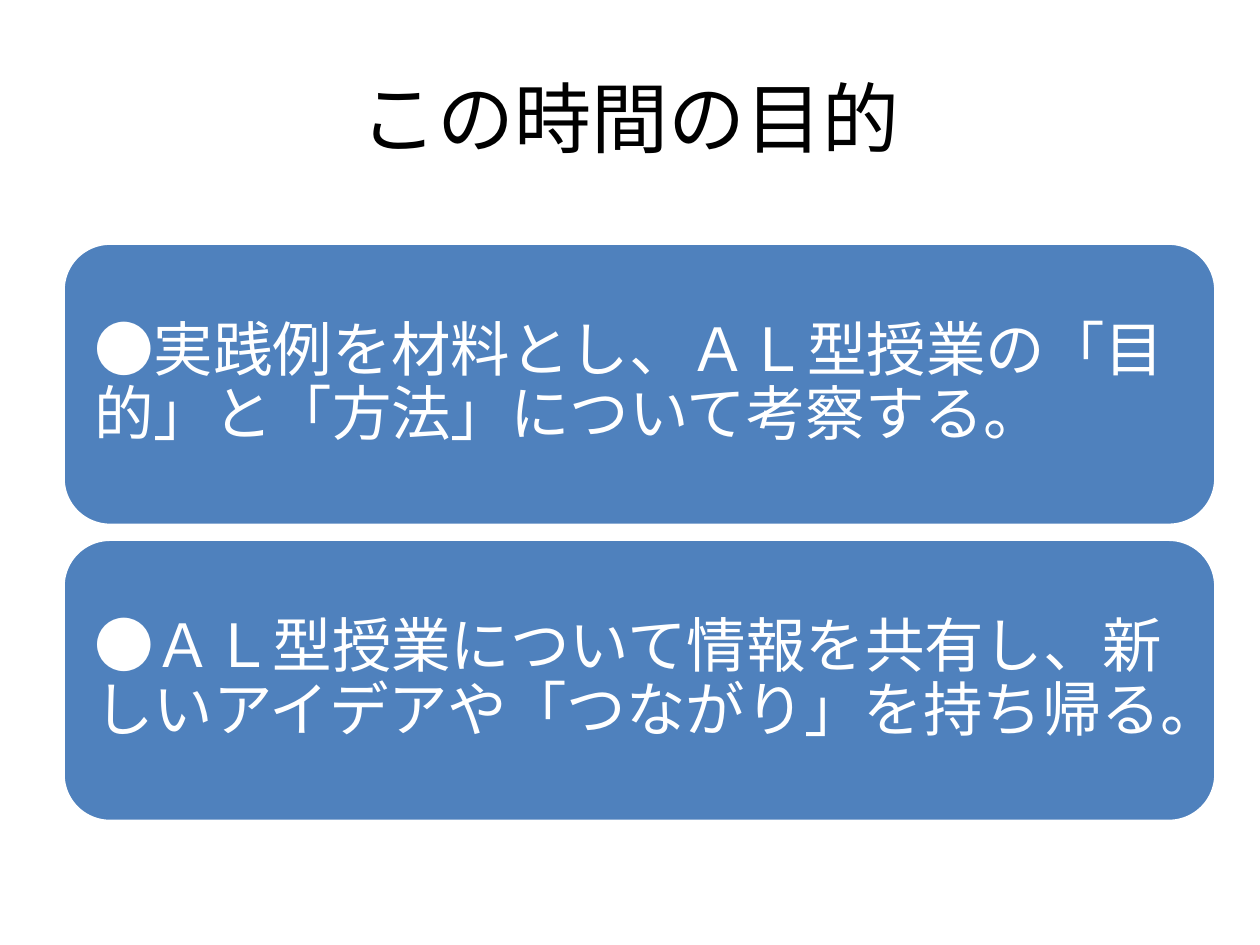
from pptx import Presentation
from pptx import util as u
from pptx.dml import color
from pptx.enum import lang, shapes, text

TITLE = "この時間の目的"
GOALS = [
    "●実践例を材料とし、ＡＬ型授業の「目的」と「方法」について考察する。",
    "●ＡＬ型授業について情報を共有し、新しいアイデアや「つながり」を持ち帰る。",
]

THEME = {
    "font": "Cabin",
    "title_size": 44,
    "goal_size": 34,
    "ink": color.RGBColor.from_string("000000"),
    "paper": color.RGBColor.from_string("FFFFFF"),
    "card": color.RGBColor.from_string("4F81BD"),
}

LEFT = 0.5
CARD_TOP, CARD_WIDTH, CARD_HEIGHT, CARD_GAP = 1.93, 9.15, 2.24, 0.11
CARD_INSET = u.Inches(0.14)


def write(shape, content, size, ink, alignment):
    frame = shape.text_frame
    frame.text = content
    frame.word_wrap = True
    frame.vertical_anchor = text.MSO_ANCHOR.MIDDLE
    paragraph = frame.paragraphs[0]
    paragraph.alignment = alignment
    font = paragraph.runs[0].font
    font.name = THEME["font"]
    font.size = u.Pt(size)
    font.color.rgb = ink
    font.language_id = lang.MSO_LANGUAGE_ID.JAPANESE
    return frame


def add_title(slide):
    title = slide.shapes.add_textbox(
        u.Inches(LEFT), u.Inches(0.3), u.Inches(9), u.Inches(1.25))
    write(title, TITLE, THEME["title_size"], THEME["ink"], text.PP_ALIGN.CENTER)


def add_goal(slide, index, goal):
    top = CARD_TOP + index * (CARD_HEIGHT + CARD_GAP)
    card = slide.shapes.add_shape(
        shapes.MSO_SHAPE.ROUNDED_RECTANGLE,
        u.Inches(LEFT), u.Inches(top), u.Inches(CARD_WIDTH), u.Inches(CARD_HEIGHT))
    card.shadow.inherit = False
    card.fill.solid()
    card.fill.fore_color.rgb = THEME["card"]
    card.line.color.rgb = THEME["paper"]
    card.line.width = u.Pt(2)
    frame = write(card, goal, THEME["goal_size"], THEME["paper"], text.PP_ALIGN.LEFT)
    frame.margin_left = frame.margin_right = CARD_INSET
    frame.margin_top = frame.margin_bottom = CARD_INSET
    paragraph = frame.paragraphs[0]
    paragraph.line_spacing = 0.9
    paragraph.space_after = u.Pt(12)


def main():
    presentation = Presentation()
    presentation.slide_width = u.Inches(10)
    presentation.slide_height = u.Inches(7.5)
    slide = presentation.slides.add_slide(presentation.slide_layouts[6])
    add_title(slide)
    for index, goal in enumerate(GOALS):
        add_goal(slide, index, goal)
    presentation.save("out.pptx")


if __name__ == "__main__":
    main()
